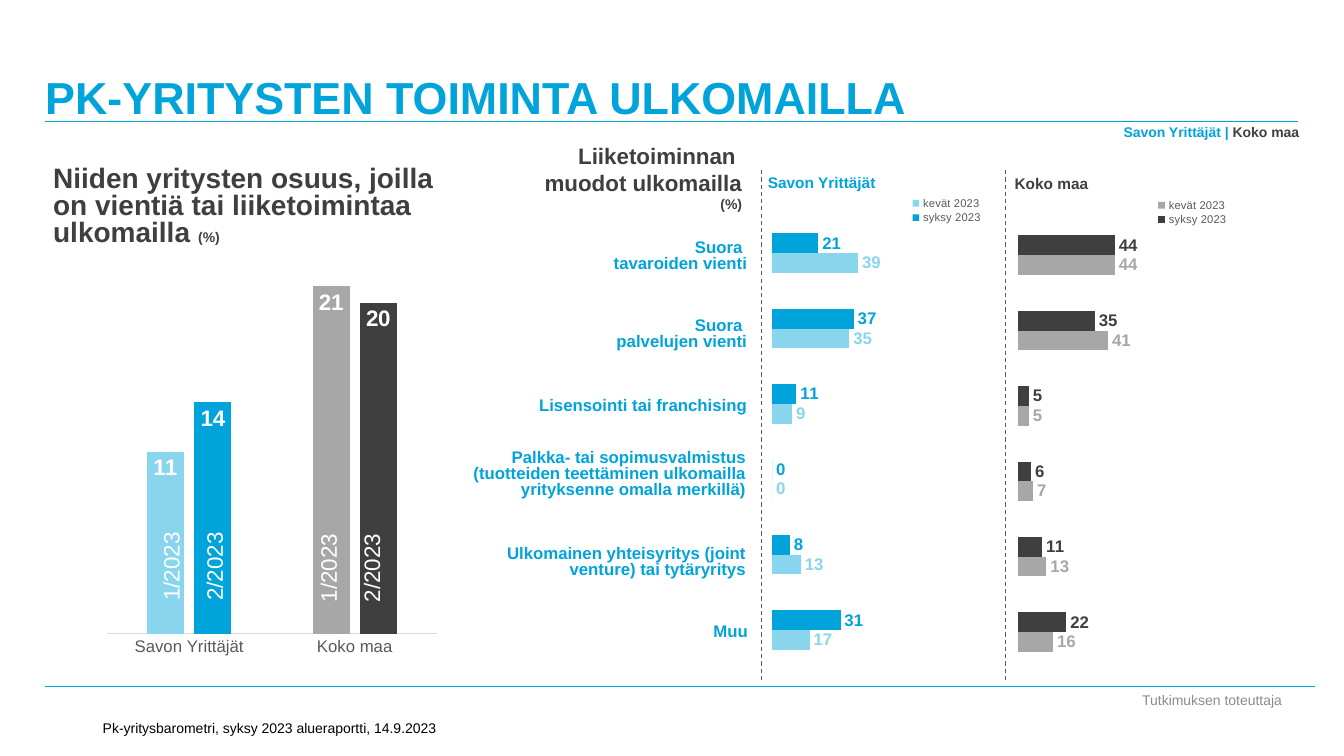
"""Build the slide on small-business activity abroad."""
import dataclasses

import pptx
import pptx.chart.data
import pptx.dml.color
import pptx.enum.chart
import pptx.enum.dml
import pptx.enum.shapes
import pptx.enum.text
import pptx.oxml
import pptx.util

Cm, Pt = pptx.util.Cm, pptx.util.Pt
ALIGN = pptx.enum.text.PP_ALIGN
ANCHOR = pptx.enum.text.MSO_ANCHOR
AUTOSIZE = pptx.enum.text.MSO_AUTO_SIZE
LABEL = pptx.enum.chart.XL_LABEL_POSITION
CHART = pptx.enum.chart.XL_CHART_TYPE


@dataclasses.dataclass(frozen=True)
class Theme:
    font: str = "Arial"
    blue: str = "00A3DA"
    light_blue: str = "8AD5EE"
    dark: str = "3F3F3F"
    gray: str = "A7A7A7"
    axis_text: str = "595959"
    axis_line: str = "D9D9D9"
    credit: str = "8C8C8C"
    black: str = "000000"
    white: str = "FFFFFF"
    title: int = 32
    headline: int = 20
    large: int = 16
    label: int = 12
    region: int = 11
    small: int = 10
    legend: int = 8


T = Theme()
TITLE = "PK-YRITYSTEN TOIMINTA ULKOMAILLA"
CREDIT = "Tutkimuksen toteuttaja"
SOURCE = "Pk-yritysbarometri, syksy 2023 alueraportti, 14.9.2023"
AREA, COUNTRY = "Savon Yrittäjät", "Koko maa"
HEADLINE = "Niiden yritysten osuus, joilla \non vientiä tai liiketoimintaa \nulkomailla "
FORMS_HEADING = ("Liiketoiminnan ", "muodot ulkomailla\n")
PERCENT = "(%)"

FORMS = [
    ("Suora \ntavaroiden vienti", (13.21, 5.94, 5.87, 1.07)),
    ("Suora \npalvelujen vienti", (13.21, 7.9, 5.87, 1.07)),
    ("Lisensointi tai franchising", (13.21, 9.93, 5.87, 0.66)),
    ("Palkka- tai sopimusvalmistus (tuotteiden teettäminen ulkomailla "
     "yrityksenne omalla merkillä)", (11.68, 11.23, 7.37, 1.9)),
    ("Ulkomainen yhteisyritys (joint venture) tai tytäryritys",
     (11.73, 13.64, 7.32, 1.07)),
    ("Muu", (15.11, 15.62, 3.99, 0.66)),
]
SHARES = [
    ("1/2023", (11, 21), (T.light_blue, T.gray)),
    ("2/2023", (14, 20), (T.blue, T.dark)),
]
SEASON_BOXES = [((3.0, 4.09), 13.61), ((6.96, 8.05), 13.64)]
PANELS = [
    (AREA, T.blue, (19.1, 4.24, 6.22, 0.74), (19.46, 4.29, 5.79, 12.67), [
        ("syksy 2023", (21, 37, 11, 0, 8, 31), T.blue),
        ("kevät 2023", (39, 35, 9, 0, 13, 17), T.light_blue)]),
    (COUNTRY, T.dark, (25.32, 4.27, 2.62, 0.74), (25.65, 4.34, 5.79, 12.67), [
        ("syksy 2023", (44, 35, 5, 6, 11, 22), T.dark),
        ("kevät 2023", (44, 41, 5, 7, 13, 16), T.gray)]),
]
RULES = [(1.14, 3.05, 32.72, 3.05), (1.14, 17.3, 33.15, 17.3), (1.42, 3.05, 32.46, 3.05)]
DIVIDERS = [(x, 4.29, x, 17.2) for x in (25.35, 19.18)]


def rgb(color):
    return pptx.dml.color.RGBColor.from_string(color)


def style(font, size, color, bold=False):
    font.name, font.size, font.bold = T.font, Pt(size), bold
    font.color.rgb = rgb(color)


def add_text(s, box, paragraphs, size, color, bold=False, align=ALIGN.LEFT,
             spacing=None, anchor=ANCHOR.TOP, grow=True):
    sp = s.shapes.add_textbox(*map(Cm, box))
    tf = sp.text_frame
    tf.word_wrap = True
    tf.vertical_anchor = anchor
    tf.auto_size = AUTOSIZE.SHAPE_TO_FIT_TEXT if grow else AUTOSIZE.NONE
    for i, text in enumerate(paragraphs):
        p = tf.add_paragraph() if i else tf.paragraphs[0]
        p.text = text.replace("\n", "\v")
        p.alignment = align
        if spacing:
            p.line_spacing = spacing
        style(p.font, size, color, bold)
    return sp


def add_run(sp, text, size=None, color=None):
    r = sp.text_frame.paragraphs[-1].add_run()
    r.text = text
    if size:
        r.font.size = Pt(size)
    if color:
        r.font.color.rgb = rgb(color)


def add_line(s, ends, color, dashed=False):
    line = s.shapes.add_connector(pptx.enum.shapes.MSO_CONNECTOR.STRAIGHT, *map(Cm, ends))
    line.line.color.rgb = rgb(color)
    line.line.width = Pt(0.75)
    if dashed:
        line.line.dash_style = pptx.enum.dml.MSO_LINE.DASH
    line._element.spPr.append(pptx.oxml.parse_xml(
        '<a:effectLst xmlns:a="http://schemas.openxmlformats.org/drawingml/2006/main"/>'))


def set_layout(parent, index, frame, inner=False):
    ns = "http://schemas.openxmlformats.org/drawingml/2006/chart"
    for old in parent.findall(f"{{{ns}}}layout"):
        parent.remove(old)
    target = '<c:layoutTarget val="inner"/>' if inner else ""
    modes = "".join(f'<c:{k}Mode val="edge"/>' for k in "xy")
    sizes = "".join(f'<c:{k} val="{v}"/>' for k, v in zip("xywh", frame))
    parent.insert(index, pptx.oxml.parse_xml(
        f'<c:layout xmlns:c="{ns}"><c:manualLayout>{target}{modes}{sizes}'
        '</c:manualLayout></c:layout>'))


def add_bars(s, kind, box, categories, series, top, gap, overlap, frame):
    data = pptx.chart.data.CategoryChartData()
    data.categories = categories
    for name, values, _ in series:
        data.add_series(name, values)
    chart = s.shapes.add_chart(kind, *map(Cm, box), data).chart
    chart.has_title = chart.has_legend = False
    style(chart.font, T.small, T.black)
    plot = chart.plots[0]
    plot.gap_width, plot.overlap, plot.vary_by_categories = gap, overlap, False
    axis = chart.value_axis
    axis.minimum_scale, axis.maximum_scale = 0, top
    axis.has_major_gridlines = axis.visible = False
    set_layout(chart.element.chart.plotArea, 0, frame, inner=True)
    return chart


def label_series(series, size, color, position):
    labels = series.data_labels
    labels.show_value = True
    labels.number_format, labels.number_format_is_linked = "#,##0", False
    labels.position = position
    style(labels.font, size, color, True)


def add_share_chart(s):
    chart = add_bars(s, CHART.COLUMN_CLUSTERED, (2.51, 5.44, 8.69, 11.33),
                     (AREA, COUNTRY), SHARES, 25, 219, -27, (0.02, 0.01, 0.96, 0.92))
    axis = chart.category_axis
    axis.major_tick_mark = pptx.enum.chart.XL_TICK_MARK.NONE
    axis.format.line.color.rgb = rgb(T.axis_line)
    axis.format.line.width = Pt(0.75)
    style(axis.tick_labels.font, T.label, T.axis_text)
    for series, (_, _, colors) in zip(chart.plots[0].series, SHARES):
        for i, color in enumerate(colors):
            fill = series.points[i].format.fill
            fill.solid()
            fill.fore_color.rgb = rgb(color)
        label_series(series, T.large, T.white, LABEL.INSIDE_END)
    for lefts, top in SEASON_BOXES:
        for left, (season, _, _) in zip(lefts, SHARES):
            sp = add_text(s, (left, top, 2.62, 0.94), [season], T.large, T.white)
            sp.rotation = 270


def add_panel(s, region, color, heading_box, chart_box, rows):
    add_text(s, heading_box, [region], T.region, color, True)
    chart = add_bars(s, CHART.BAR_CLUSTERED, chart_box, [str(i + 1) for i in range(len(FORMS))],
                     rows, 100, 182, 0, (0, 0.09, 0.96, 0.9))
    chart.category_axis.reverse_order = True
    chart.category_axis.visible = False
    chart.has_legend = True
    chart.legend.position = pptx.enum.chart.XL_LEGEND_POSITION.RIGHT
    chart.legend.include_in_layout = False
    style(chart.legend.font, T.legend, T.axis_text)
    set_layout(chart.legend._element, 1, (0.58, 0.05, 0.36, 0.06))
    for series, (_, _, fill) in zip(chart.plots[0].series, rows):
        series.format.fill.solid()
        series.format.fill.fore_color.rgb = rgb(fill)
        label_series(series, T.label, fill, LABEL.OUTSIDE_END)


def main():
    prs = pptx.Presentation()
    prs.slide_width, prs.slide_height = Cm(33.87), Cm(19.05)
    s = prs.slides.add_slide(prs.slide_layouts[5])
    title = s.shapes.title
    title.left, title.top, title.width, title.height = map(Cm, (1.14, 0, 31.24, 3.1))
    tf = title.text_frame
    tf.text = TITLE
    tf.margin_left = tf.margin_top = tf.margin_right = tf.margin_bottom = 0
    tf.vertical_anchor, tf.auto_size = ANCHOR.BOTTOM, AUTOSIZE.NONE
    tf.paragraphs[0].alignment = ALIGN.LEFT
    style(tf.paragraphs[0].font, T.title, T.blue, True)

    add_text(s, (28.35, 17.32, 4.39, 0.66), [CREDIT], T.small, T.credit,
             align=ALIGN.CENTER, anchor=ANCHOR.MIDDLE, grow=False)
    add_text(s, (2.34, 17.78, 10.59, 0.89), [SOURCE], T.small, T.black,
             anchor=ANCHOR.BOTTOM, grow=False)
    for ends in RULES:
        add_line(s, ends, T.blue)
    for ends in DIVIDERS:
        add_line(s, ends, T.axis_text, dashed=True)
    sp = add_text(s, (20.65, 3.0, 12.34, 0.69), [AREA + " | "], T.small, T.blue, True, ALIGN.RIGHT)
    add_run(sp, COUNTRY, color=T.dark)
    sp = add_text(s, (13.36, 3.45, 5.59, 2.06), FORMS_HEADING, T.large, T.dark, True, ALIGN.RIGHT)
    add_run(sp, PERCENT, T.small)
    for text, box in FORMS:
        add_text(s, box, [text], T.label, T.blue, True, ALIGN.RIGHT, 0.8)
    add_share_chart(s)
    for panel in PANELS:
        add_panel(s, *panel)
    sp = add_text(s, (1.09, 4.09, 12.34, 2.31), [HEADLINE], T.headline, T.dark, True, spacing=0.8)
    add_run(sp, PERCENT, T.small)
    prs.save("out.pptx")


if __name__ == "__main__":
    main()
